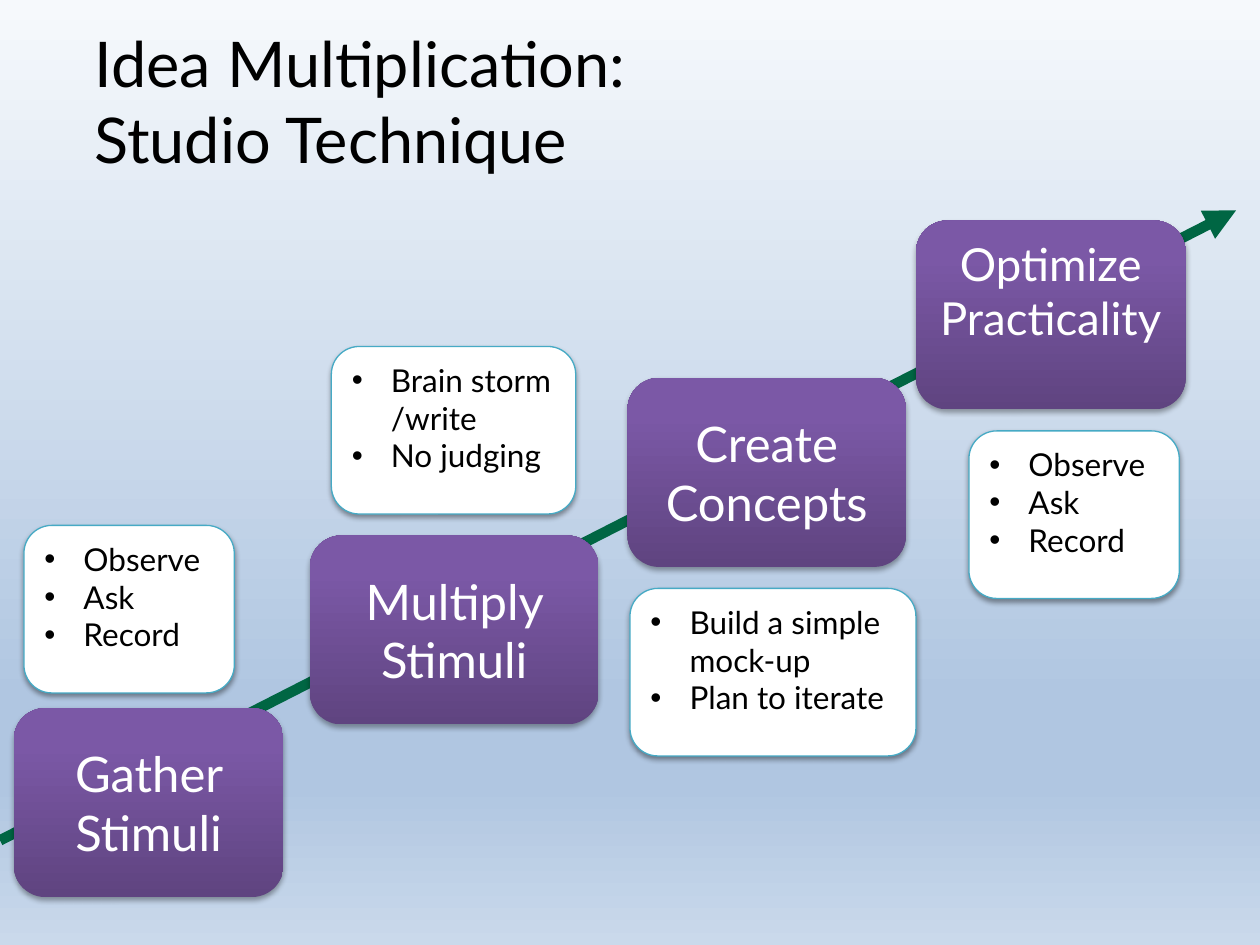
from dataclasses import dataclass

import pptx
import pptx.dml.color
import pptx.enum.shapes
import pptx.enum.text
import pptx.oxml
import pptx.oxml.ns
import pptx.util
from pptx.util import Inches

qn = pptx.oxml.ns.qn
ROUNDED = pptx.enum.shapes.MSO_SHAPE.ROUNDED_RECTANGLE
ANCHOR = pptx.enum.text.MSO_ANCHOR
ALIGN = pptx.enum.text.PP_ALIGN


@dataclass(frozen=True)
class Theme:
    font: str = "Lato"
    title_size: int = 36
    step_size: int = 28
    small_step_size: int = 26
    note_size: int = 18
    text: str = "000000"
    light: str = "FFFFFF"
    arrow: str = "006643"
    note_line: str = "46AAC5"
    background: tuple = ((0, "F6F9FC"), (74, "B0C6E1"), (83, "B0C6E1"), (100, "CAD9EB"))
    step_fill: tuple = ((0, "5F4480"), (80, "7B58A6"), (100, "7C57A8"))


THEME = Theme()
STEP_HEIGHT = 1.5
NOTE_HEIGHT = 1.33
NOTE_INDENT = Inches(0.31)

# Step: text, left, top, width, size, anchor; note: left, top, width, bullets
STEPS = [
    (("Multiply Stimuli", 2.46, 4.25, 2.29, THEME.step_size, ANCHOR.MIDDLE),
     (2.63, 2.75, 1.94, ["Brain storm /write", "No judging"])),
    (("Gather Stimuli", 0.11, 5.62, 2.14, THEME.step_size, ANCHOR.MIDDLE),
     (0.19, 4.17, 1.67, ["Observe", "Ask", "Record"])),
    (("Create Concepts", 4.98, 3, 2.21, THEME.step_size, ANCHOR.MIDDLE),
     (5, 4.67, 2.27, ["Build a simple mock-up", "Plan to iterate"])),
    (("Optimize Practicality", 7.27, 1.75, 2.14, THEME.small_step_size, ANCHOR.TOP),
     (7.69, 3.42, 1.67, ["Observe", "Ask", "Record"])),
]


def rgb(color):
    return pptx.dml.color.RGBColor.from_string(color)


def add_child(parent, tag, **attributes):
    child = parent.makeelement(qn(tag), {key: str(value) for key, value in attributes.items()})
    parent.append(child)
    return child


def set_gradient(fill, owner, stops, angle):
    """Give the fill found inside the owner element any number of stops."""
    fill.gradient()
    gradient = owner.find(".//" + qn("a:gradFill"))
    stop_list = gradient.find(qn("a:gsLst"))
    for stop in list(stop_list):
        stop_list.remove(stop)
    for position, color in stops:
        stop = add_child(stop_list, "a:gs", pos=position * 1000)
        add_child(stop, "a:srgbClr", val=color)
    gradient.find(qn("a:lin")).set("ang", str(angle * 60000))


def set_shadow(shape, opacity, distance):
    shape.shadow.inherit = False
    effects = shape.element.spPr.find(qn("a:effectLst"))
    shadow = add_child(effects, "a:outerShdw", blurRad=pptx.util.Pt(3.1),
                       dist=pptx.util.Pt(distance), dir=90 * 60000, rotWithShape=0)
    color = add_child(shadow, "a:srgbClr", val=THEME.text)
    add_child(color, "a:alpha", val=opacity * 1000)


def add_run(paragraph, text, size, color):
    run = paragraph.add_run()
    run.text = text
    run.font.name = THEME.font
    run.font.size = pptx.util.Pt(size)
    run.font.color.rgb = rgb(color)


def add_title(slide, lines, box):
    title = slide.shapes.title
    title.left, title.top, title.width, title.height = box
    frame = title.text_frame
    frame.word_wrap = True
    frame.auto_size = pptx.enum.text.MSO_AUTO_SIZE.NONE
    frame.vertical_anchor = ANCHOR.MIDDLE
    paragraph = frame.paragraphs[0]
    paragraph.alignment = ALIGN.LEFT
    for index, line in enumerate(lines):
        if index:
            paragraph.add_line_break()
        add_run(paragraph, line, THEME.title_size, THEME.text)


def add_arrow(slide, start, end):
    arrow = slide.shapes.add_connector(pptx.enum.shapes.MSO_CONNECTOR.STRAIGHT, *start, *end)
    arrow.line.color.rgb = rgb(THEME.arrow)
    arrow.line.width = pptx.util.Pt(6)
    add_child(arrow.line._get_or_add_ln(), "a:tailEnd", type="triangle")
    add_child(arrow._element.spPr, "a:effectLst")


def add_step(shapes, text, box, size, anchor):
    step = shapes.add_shape(ROUNDED, *box)
    set_gradient(step.fill, step.element, THEME.step_fill, 270)
    step.line.fill.background()
    set_shadow(step, opacity=35, distance=1.8)
    step.text_frame.word_wrap = True
    step.text_frame.vertical_anchor = anchor
    paragraph = step.text_frame.paragraphs[0]
    paragraph.alignment = ALIGN.CENTER
    add_run(paragraph, text, size, THEME.light)


def add_note(shapes, bullets, box):
    note = shapes.add_shape(ROUNDED, *box)
    note.fill.solid()
    note.fill.fore_color.rgb = rgb(THEME.light)
    note.line.color.rgb = rgb(THEME.note_line)
    note.line.width = pptx.util.Pt(0.75)
    set_shadow(note, opacity=38, distance=1.6)
    frame = note.text_frame
    frame.word_wrap = True
    frame.vertical_anchor = ANCHOR.TOP
    for index, bullet in enumerate(bullets):
        paragraph = frame.add_paragraph() if index else frame.paragraphs[0]
        paragraph.alignment = ALIGN.LEFT
        properties = paragraph._p.get_or_add_pPr()
        properties.set("marL", str(NOTE_INDENT))
        properties.set("indent", str(-NOTE_INDENT))
        add_child(properties, "a:buFont", typeface="Arial")
        add_child(properties, "a:buChar", char="•")
        add_run(paragraph, bullet, THEME.note_size, THEME.text)


def add_stage(slide, step, note):
    """Group a step with the note that explains it."""
    shapes = slide.shapes.add_group_shape().shapes
    text, left, top, width, size, anchor = step
    add_step(shapes, text, (Inches(left), Inches(top), Inches(width), Inches(STEP_HEIGHT)),
             size, anchor)
    left, top, width, bullets = note
    add_note(shapes, bullets, (Inches(left), Inches(top), Inches(width), Inches(NOTE_HEIGHT)))


def main():
    presentation = pptx.Presentation()
    presentation.slide_width = Inches(10)
    presentation.slide_height = Inches(7.5)
    slide = presentation.slides.add_slide(presentation.slide_layouts.get_by_name("Title Only"))
    set_gradient(slide.background.fill, slide.element, THEME.background, 90)
    add_title(slide, ["Idea Multiplication: ", "Studio Technique"],
              (Inches(0.65), Inches(0.17), Inches(9.6), Inches(1.25)))
    add_arrow(slide, (Inches(0), Inches(6.67)), (Inches(9.81), Inches(1.67)))
    for step, note in STEPS:
        add_stage(slide, step, note)
    presentation.save("out.pptx")


if __name__ == "__main__":
    main()
